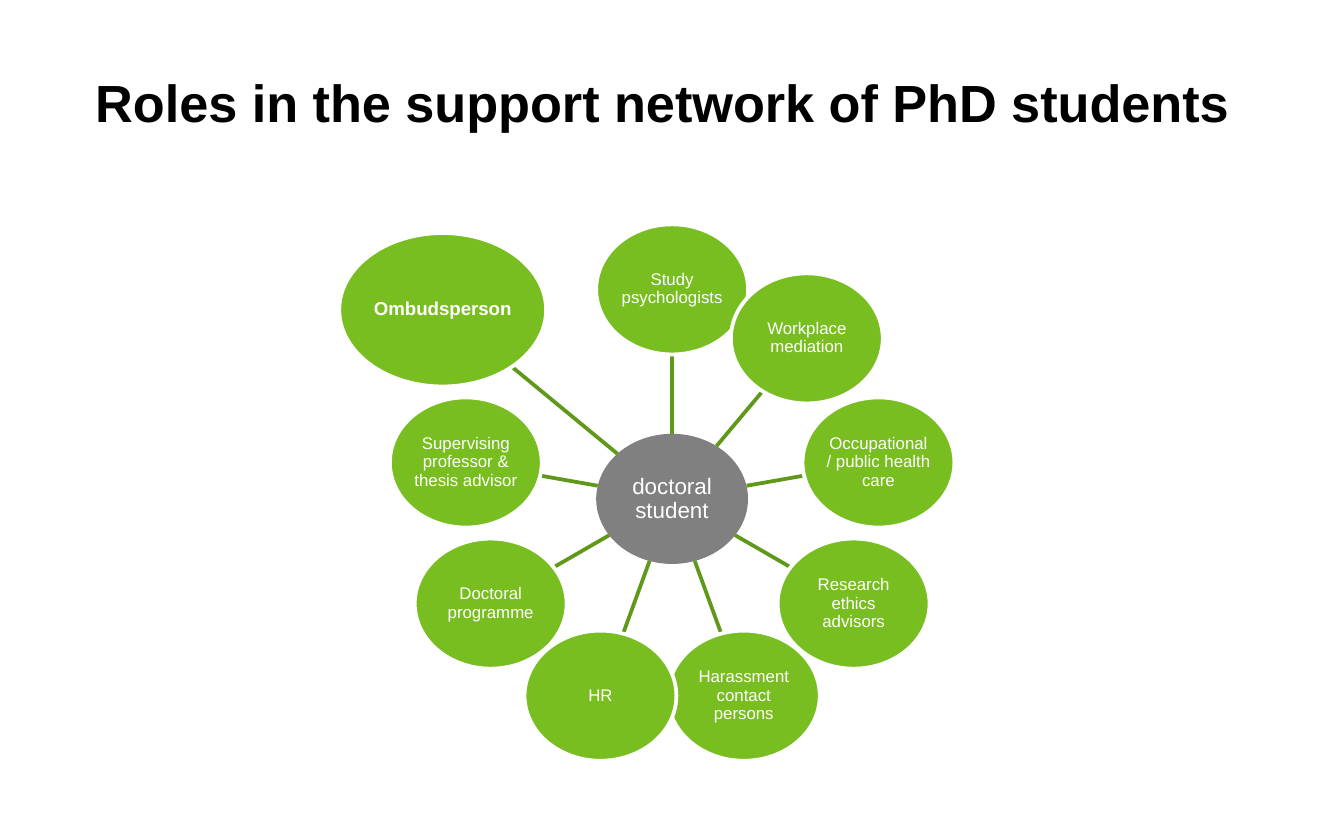
from math import cos, hypot, radians, sin

from lxml.etree import SubElement
from pptx import Presentation
from pptx.dml.color import RGBColor
from pptx.enum.shapes import MSO_CONNECTOR, MSO_SHAPE
from pptx.enum.text import MSO_ANCHOR, MSO_AUTO_SIZE, PP_ALIGN
from pptx.oxml.ns import qn
from pptx.util import Cm, Pt

BLACK = RGBColor(0x00, 0x00, 0x00)
WHITE = RGBColor(0xFF, 0xFF, 0xFF)
GRAY = RGBColor(0x80, 0x80, 0x80)
GREEN = RGBColor(0x78, 0xBE, 0x20)
DARK_GREEN = RGBColor(0x60, 0x98, 0x1A)
FONT = "Arial"

# Ellipse sizes and distances from the hub, in cm
ROLE_SIZE = (2.87, 2.46)
OMBUDSPERSON_SIZE = (3.91, 2.9)
ROLE_DISTANCE = 3.96
OMBUDSPERSON_DISTANCE = 5.62
OMBUDSPERSON_ANGLE = 309.5

# Clockwise from the top, in equal steps
ROLES = [
    "Study psychologists",
    "Workplace mediation",
    "Occupational / public health care",
    "Research ethics advisors",
    "Harassment contact persons",
    "HR",
    "Doctoral programme",
    "Supervising professor & thesis advisor",
]
STEP = 360 / (len(ROLES) + 1)


def set_margins(frame, margin):
    frame.margin_left = frame.margin_right = margin
    frame.margin_top = frame.margin_bottom = margin


def add_title(slide, left, top, width, height):
    title = slide.shapes.title
    title.left, title.top = Cm(left), Cm(top)
    title.width, title.height = Cm(width), Cm(height)
    frame = title.text_frame
    frame.text = "Roles in the support network of PhD students"
    frame.word_wrap = True
    frame.auto_size = MSO_AUTO_SIZE.NONE
    frame.vertical_anchor = MSO_ANCHOR.TOP
    set_margins(frame, 0)
    paragraph = frame.paragraphs[0]
    paragraph.alignment = PP_ALIGN.LEFT
    paragraph.space_before = Pt(3)
    paragraph.font.name = FONT
    paragraph.font.size = Pt(28)
    paragraph.font.bold = True
    paragraph.font.color.rgb = BLACK


def add_bubble(slide, center, size, label, fill, font_size, bold=False):
    (x, y), (width, height) = center, size
    bubble = slide.shapes.add_shape(
        MSO_SHAPE.OVAL, Cm(x - width / 2), Cm(y - height / 2), Cm(width), Cm(height)
    )
    bubble.shadow.inherit = False
    bubble.fill.solid()
    bubble.fill.fore_color.rgb = fill
    frame = bubble.text_frame
    frame.text = label
    frame.word_wrap = True
    frame.vertical_anchor = MSO_ANCHOR.MIDDLE
    set_margins(frame, Cm(0.02))
    paragraph = frame.paragraphs[0]
    paragraph.alignment = PP_ALIGN.CENTER
    paragraph.line_spacing = 0.9
    paragraph.font.name = FONT
    paragraph.font.size = Pt(font_size)
    paragraph.font.bold = bold
    paragraph.font.color.rgb = WHITE
    return bubble


def edge_distance(size, dx, dy):
    """Distance from an ellipse's center to its edge along a unit direction."""
    return 1 / hypot(dx / (size[0] / 2), dy / (size[1] / 2))


def add_role(slide, hub, angle, distance, size, label, font_size, bold=False):
    dx, dy = sin(radians(angle)), -cos(radians(angle))

    # Spoke between the two ellipse edges
    start = edge_distance(ROLE_SIZE, dx, dy)
    end = distance - edge_distance(size, dx, dy)
    spoke = slide.shapes.add_connector(
        MSO_CONNECTOR.STRAIGHT,
        Cm(hub[0] + start * dx), Cm(hub[1] + start * dy),
        Cm(hub[0] + end * dx), Cm(hub[1] + end * dy),
    )
    spoke.line.color.rgb = DARK_GREEN
    spoke.line.width = Pt(2)
    SubElement(spoke.element.spPr, qn("a:effectLst"))

    # Role bubble
    center = (hub[0] + distance * dx, hub[1] + distance * dy)
    bubble = add_bubble(slide, center, size, label, GREEN, font_size, bold)
    bubble.line.color.rgb = WHITE
    bubble.line.width = Pt(2)


def add_support_network(slide, left, top, width, height):
    hub = (left + 0.542 * width, top + 0.512 * height)
    student = add_bubble(slide, hub, ROLE_SIZE, "doctoral student", GRAY, 12)
    student.line.fill.background()
    for index, role in enumerate(ROLES):
        add_role(slide, hub, index * STEP, ROLE_DISTANCE, ROLE_SIZE, role, 9)
    add_role(slide, hub, OMBUDSPERSON_ANGLE, OMBUDSPERSON_DISTANCE,
             OMBUDSPERSON_SIZE, "Ombudsperson", 10, bold=True)


def main():
    presentation = Presentation()
    presentation.slide_width = Cm(25.4)
    presentation.slide_height = Cm(15.88)
    slide = presentation.slides.add_slide(presentation.slide_layouts[5])
    add_title(slide, 1.8, 1.32, 23.6, 3.07)
    add_support_network(slide, 6.4, 4.24, 11.63, 10.14)
    presentation.save("out.pptx")


if __name__ == "__main__":
    main()
